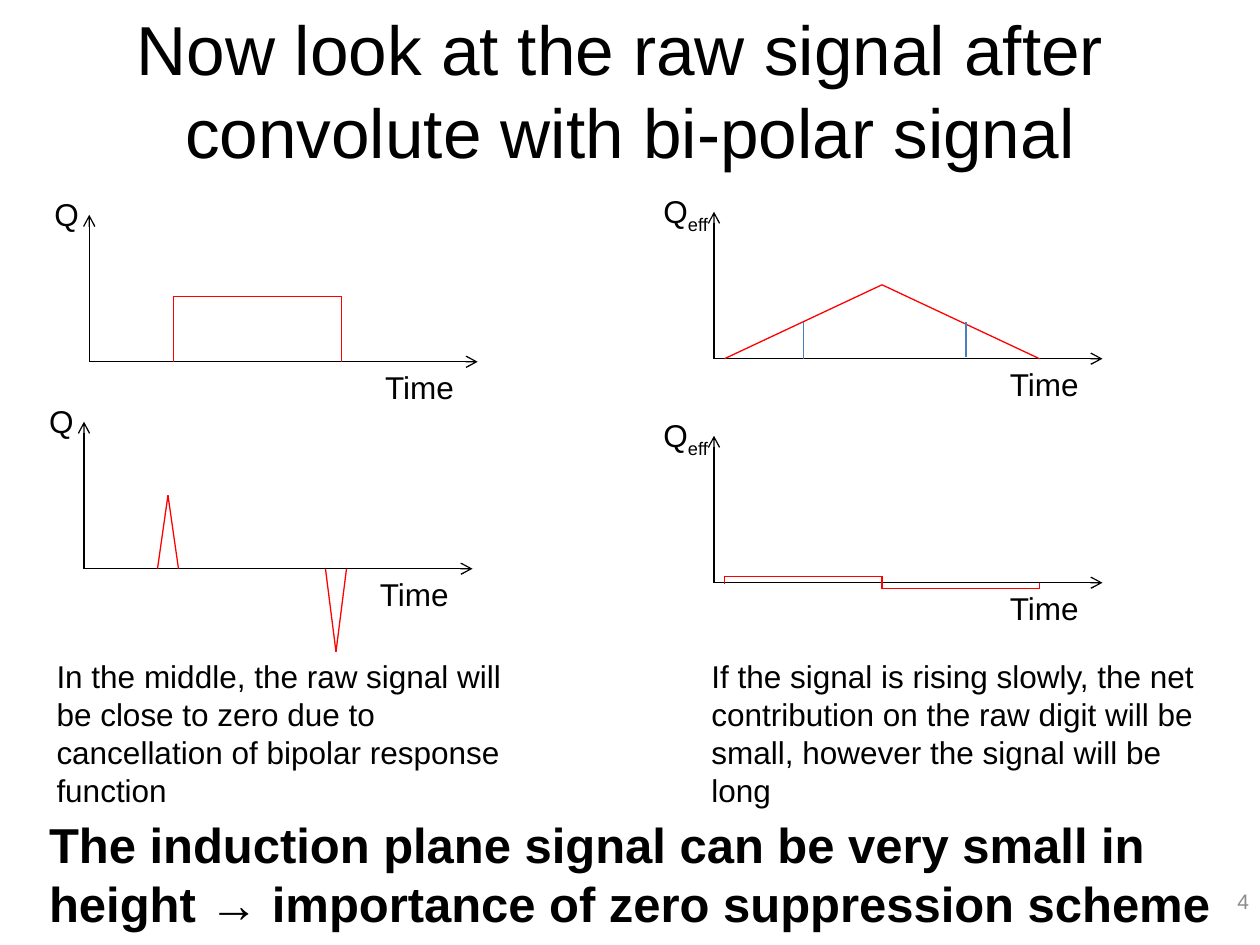
from itertools import pairwise

from lxml.etree import SubElement
from pptx import Presentation
from pptx.dml.color import RGBColor
from pptx.enum.shapes import MSO_CONNECTOR
from pptx.enum.text import MSO_ANCHOR, MSO_AUTO_SIZE, PP_ALIGN
from pptx.oxml.ns import qn
from pptx.util import Pt

BLACK, RED, BLUE, GRAY = "000000", "FF0000", "4B7EBC", "8C8C8C"
AXIS_HEIGHT, AXIS_WIDTH = 84, 222


def colour(value):
    return RGBColor.from_string(value)


def place(shape, left, top, width, height):
    shape.left, shape.top = Pt(left), Pt(top)
    shape.width, shape.height = Pt(width), Pt(height)


def write(box, text, subscript="", size=18, fill=BLACK, bold=False,
          align=PP_ALIGN.LEFT, anchor=MSO_ANCHOR.TOP):
    """Fill a box with one paragraph, optionally ending in a subscript."""
    frame = box.text_frame
    frame.word_wrap = True
    frame.auto_size = MSO_AUTO_SIZE.NONE
    frame.vertical_anchor = anchor
    frame.text = text
    para = frame.paragraphs[0]
    para.alignment = align
    if subscript:
        span = para.add_run()
        span.text = subscript
        span.font._element.set("baseline", "-25000")
    for span in para.runs:
        span.font.name = "Arial"
        span.font.size = Pt(size)
        span.font.bold = bold
        span.font.color.rgb = colour(fill)


def add_text(page, text, left, top, width, height, **style):
    box = page.shapes.add_textbox(Pt(left), Pt(top), Pt(width), Pt(height))
    write(box, text, **style)


def add_line(page, start, end, stroke, arrow=False):
    line = page.shapes.add_connector(
        MSO_CONNECTOR.STRAIGHT, *(Pt(value) for value in (*start, *end)))
    line.line.color.rgb = colour(stroke)
    line.line.width = Pt(0.75)
    if arrow:
        SubElement(line.line._get_or_add_ln(), qn("a:tailEnd"), type="arrow")
    SubElement(line._element.spPr, qn("a:effectLst"))


def add_plot(page, x, y, label_offset, subscript, curves):
    """Draw axes from origin (x, y); curve points are offsets, upwards positive."""
    add_line(page, (x, y), (x, y - AXIS_HEIGHT), BLACK, arrow=True)
    add_line(page, (x, y), (x + AXIS_WIDTH, y), BLACK, arrow=True)
    add_text(page, "Time", x + 162, y, 96, 29)
    add_text(page, "Q", x - label_offset, y - 99, 54, 29, subscript=subscript)
    for stroke, points in curves:
        corners = [(x + right, y - up) for right, up in points]
        for start, end in pairwise(corners):
            add_line(page, start, end, stroke)


def main():
    deck = Presentation()
    deck.slide_width, deck.slide_height = Pt(720), Pt(540)
    page = deck.slides.add_slide(deck.slide_layouts[5])

    title = page.shapes.title
    place(title, 36, 6, 648, 90)
    write(title, "Now look at the raw signal after \vconvolute with bi-polar signal",
          size=39.6, align=PP_ALIGN.CENTER, anchor=MSO_ANCHOR.MIDDLE)
    # The page number sits in the margin, clear of the closing statement.
    add_text(page, "4", 700, 500.5, 20, 28.75, size=12, fill=GRAY,
             align=PP_ALIGN.RIGHT, anchor=MSO_ANCHOR.MIDDLE)

    block = [(RED, [(48, 0), (48, 37.5), (144, 37.5), (144, 0)])]
    spikes = [(RED, [(42, 0), (48, 42), (54, 0)]),
              (RED, [(138, 0), (144, -47.5), (150, 0)])]
    triangle = [(RED, [(6, 0), (96, 42.25), (186, 0)]),
                (BLUE, [(51, 0), (51, 21.25)]),
                (BLUE, [(144, 1.25), (144, 21.25)])]
    shallow_steps = [(RED, [(6, -0.5), (6, 3.75), (96, 3.75),
                            (96, -3.5), (186, -3.5), (186, 0)])]
    add_plot(page, 51, 206.75, 27, "", block)
    add_plot(page, 48, 325, 27, "", spikes)
    add_plot(page, 408, 205, 36, "eff", triangle)
    add_plot(page, 408, 333, 36, "eff", shallow_steps)

    add_text(page, "In the middle, the raw signal will be close to zero due to "
             "cancellation of bipolar response function", 25.2, 372, 281, 72.7)
    add_text(page, "If the signal is rising slowly, the net contribution on the raw "
             "digit will be small, however the signal will be long",
             399.5, 372, 297, 72.7)
    add_text(page, "The induction plane signal can be very small in height → "
             "importance of zero suppression scheme",
             21, 462, 679, 75, size=28, bold=True)
    deck.save("out.pptx")


if __name__ == "__main__":
    main()
